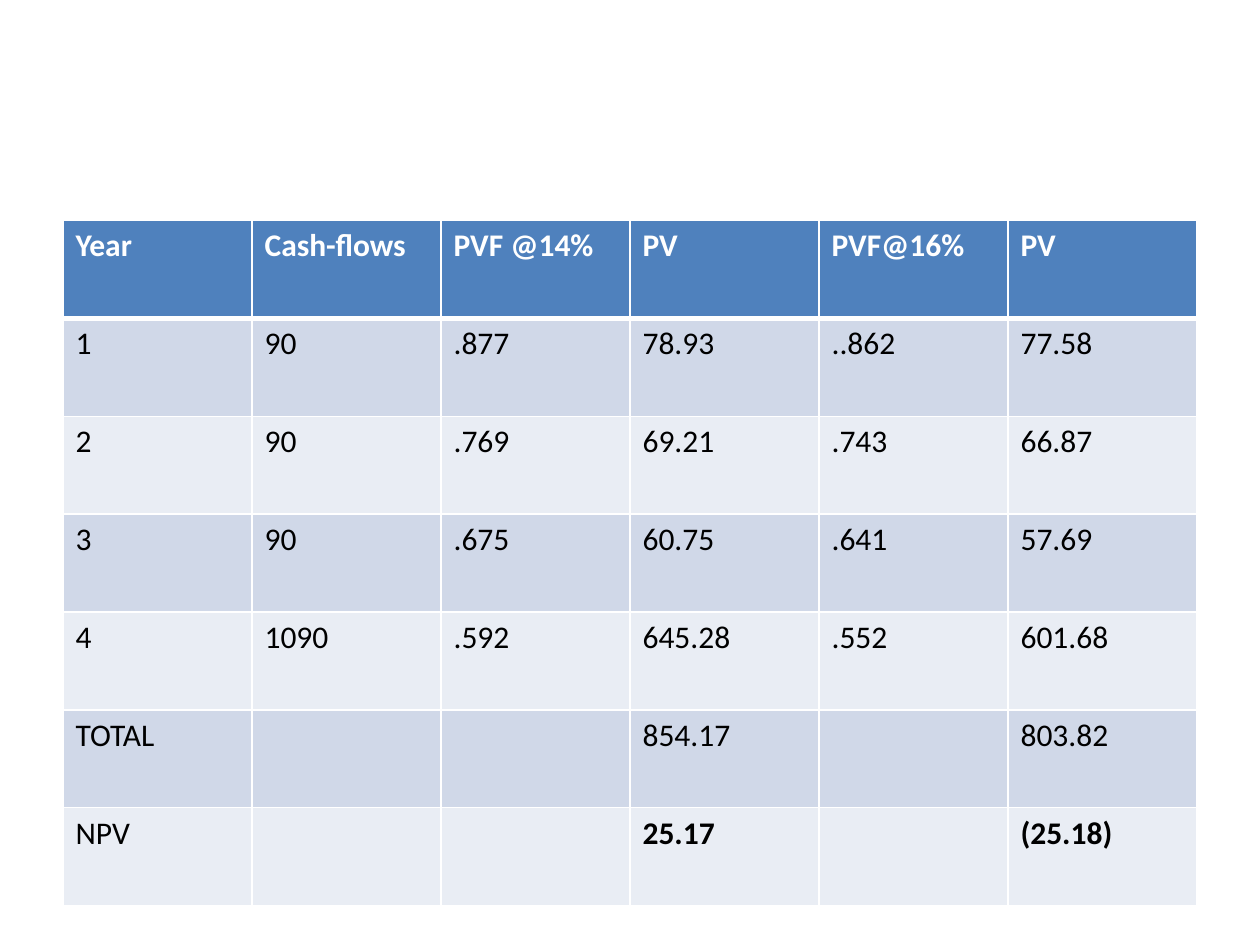
from lxml.etree import SubElement
from pptx import Presentation
from pptx.dml.color import RGBColor as Color
from pptx.oxml.ns import qn
from pptx.util import Inches, Pt

COLORS = {
    "header": "4F81BD",
    "odd": "D0D8E8",
    "even": "E9EDF4",
    "border": "FFFFFF",
    "header_text": "FFFFFF",
    "body_text": "000000",
}
ROWS = [
    ("Year", "Cash-flows", "PVF @14%", "PV", "PVF@16%", "PV"),
    ("1", "90", ".877", "78.93", "..862", "77.58"),
    ("2", "90", ".769", "69.21", ".743", "66.87"),
    ("3", "90", ".675", "60.75", ".641", "57.69"),
    ("4", "1090", ".592", "645.28", ".552", "601.68"),
    ("TOTAL", "", "", "854.17", "", "803.82"),
    ("NPV", "", "", "25.17", "", "(25.18)"),
]
LEFT, TOP, WIDTH, HEIGHT = 0.5, 1.75, 9, 5.44


def add_borders(cell, widths):
    properties = cell._tc.get_or_add_tcPr()
    for side, width in widths.items():
        line = SubElement(properties, qn(f"a:ln{side}"), w=str(Pt(width)))
        fill = SubElement(line, qn("a:solidFill"))
        SubElement(fill, qn("a:srgbClr"), val=COLORS["border"])


def style_cell(cell, text, row, column):
    is_header = row == 0
    add_borders(cell, {"L": 1, "R": 1, "T": 3 if row == 1 else 1, "B": 3 if is_header else 1})
    band = "header" if is_header else "odd" if row % 2 else "even"
    cell.fill.solid()
    cell.fill.fore_color.rgb = Color.from_string(COLORS[band])
    cell.text = text
    font = cell.text_frame.paragraphs[0].font
    font.name = "Calibri"
    font.size = Pt(18)
    font.bold = is_header or (row == len(ROWS) - 1 and column > 0)
    font.color.rgb = Color.from_string(COLORS["header_text" if is_header else "body_text"])


def main():
    deck = Presentation()
    deck.slide_width, deck.slide_height = Inches(10), Inches(7.5)
    page = deck.slides.add_slide(deck.slide_layouts[6])
    frame = page.shapes.add_table(
        len(ROWS), len(ROWS[0]), Inches(LEFT), Inches(TOP), Inches(WIDTH), Inches(HEIGHT)
    )
    for row, values in enumerate(ROWS):
        for column, text in enumerate(values):
            style_cell(frame.table.cell(row, column), text, row, column)
    deck.save("out.pptx")


if __name__ == "__main__":
    main()
